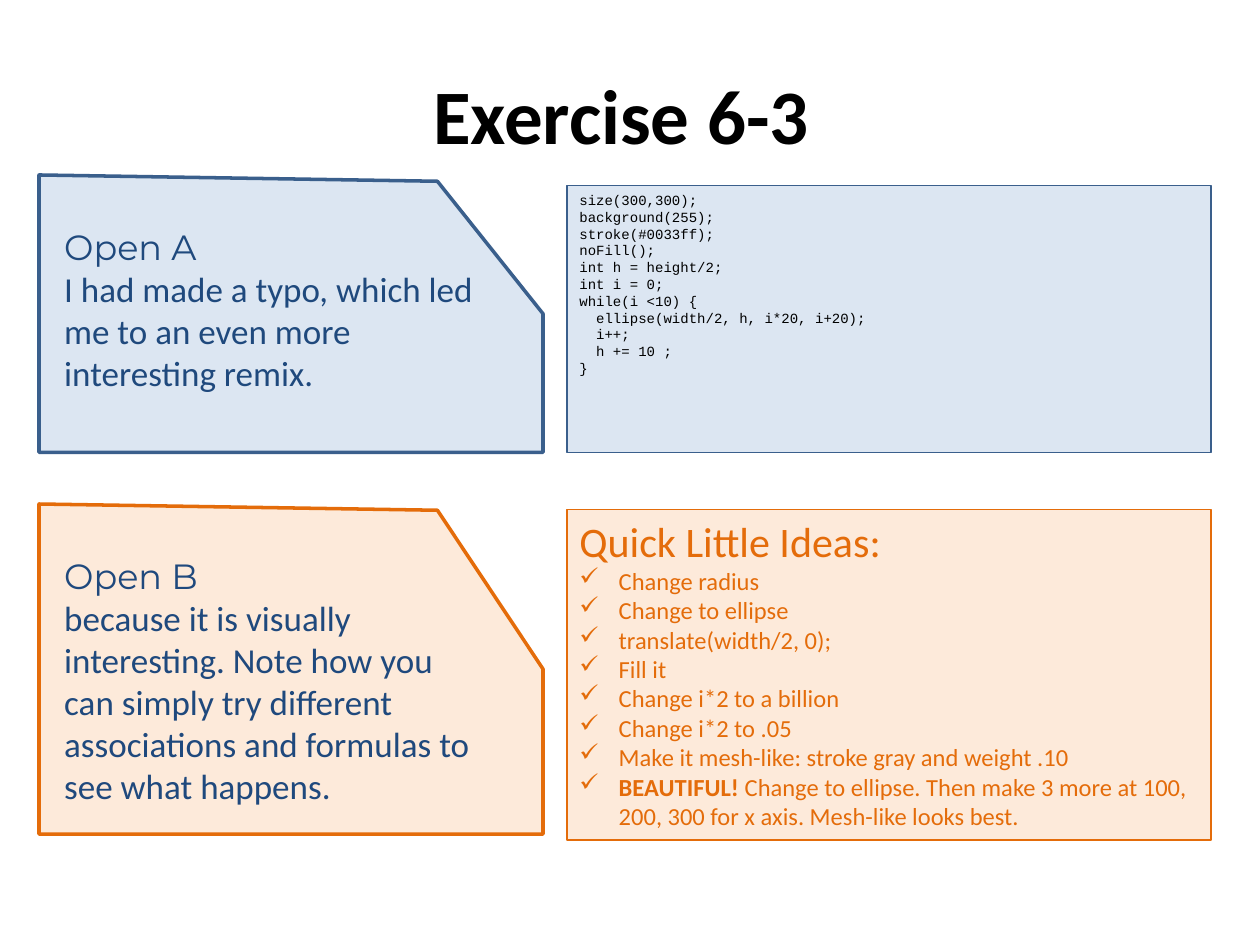
from lxml import etree
from pptx import Presentation
from pptx.dml.color import RGBColor
from pptx.enum.shapes import MSO_SHAPE
from pptx.enum.text import MSO_ANCHOR, PP_ALIGN
from pptx.oxml.ns import qn
from pptx.util import Pt

RECT = MSO_SHAPE.RECTANGLE
TOP, MIDDLE = MSO_ANCHOR.TOP, MSO_ANCHOR.MIDDLE
LEFT, CENTER = PP_ALIGN.LEFT, PP_ALIGN.CENTER

BLUE, PALE_BLUE, NAVY = "3A5F8C", "DCE6F2", "1F497D"
ORANGE, PALE_ORANGE = "E46C0A", "FDEADA"

CODE = """size(300,300);
background(255);
stroke(#0033ff);
noFill();
int h = height/2;
int i = 0;
while(i <10) {
  ellipse(width/2, h, i*20, i+20);
  i++;
  h += 10 ;
}"""

IDEAS = [
    "Change radius",
    "Change to ellipse",
    "translate(width/2, 0);",
    "Fill it",
    "Change i*2 to a billion",
    "Change i*2 to .05",
    "Make it mesh-like: stroke gray and weight .10",
]
BEST_IDEA = ("Change to ellipse. Then make 3 more at 100, 200, 300 for x axis. "
             "Mesh-like looks best.")

NOTE_A = "I had made a typo, which led me to an even more interesting remix."
NOTE_B = ("because it is visually interesting. Note how you can simply try "
          "different associations and formulas to see what happens.")


def rgb(color):
    return RGBColor.from_string(color)


def add_text(p, text, size=20, font="Calibri", color="000000", bold=False):
    r = p.add_run()
    r.text = text
    r.font.size, r.font.name, r.font.bold = Pt(size), font, bold
    r.font.color.rgb = rgb(color)


def add_check(p, indent=22.5):
    """Give the paragraph a hanging check mark as its bullet."""
    pPr = p._p.get_or_add_pPr()
    pPr.set("marL", str(Pt(indent)))
    pPr.set("indent", str(Pt(-indent)))
    etree.SubElement(pPr, qn("a:buChar")).set("char", "✓")


class Deck:
    """Holds the current slide and the shared style."""

    panel_left, panel_width = 324, 368
    card_left, card_cut, card_right = 22.3, 250, 310.3
    card_insets = (14.4, 28.8, 36, 3.6)

    def __init__(self):
        self.prs = Presentation()
        self.prs.slide_width, self.prs.slide_height = Pt(720), Pt(540)
        self.s = self.prs.slides.add_slide(self.prs.slide_layouts[5])

    def style(self, sp, fill, line, weight):
        sp.shadow.inherit = False
        sp.fill.solid()
        sp.fill.fore_color.rgb = rgb(fill)
        sp.line.color.rgb = rgb(line)
        sp.line.width = Pt(weight)
        tf = sp.text_frame
        tf.word_wrap = True
        tf.vertical_anchor = TOP
        tf.paragraphs[0].alignment = LEFT
        return tf

    def title(self, text):
        sp = self.s.shapes.title
        sp.left, sp.top, sp.width, sp.height = Pt(36), Pt(20), Pt(648), Pt(90)
        tf = sp.text_frame
        tf.vertical_anchor = MIDDLE
        p = tf.paragraphs[0]
        p.alignment = CENTER
        add_text(p, text, size=44, bold=True)

    def panel(self, top, height, fill, line):
        sp = self.s.shapes.add_shape(RECT, Pt(self.panel_left), Pt(top),
                                     Pt(self.panel_width), Pt(height))
        return self.style(sp, fill, line, 0.75)

    def paragraph(self, tf):
        p = tf.add_paragraph()
        p.alignment = LEFT
        return p

    def code(self, top, height, source):
        tf = self.panel(top, height, PALE_BLUE, BLUE)
        for i, line in enumerate(source.splitlines()):
            p = self.paragraph(tf) if i else tf.paragraphs[0]
            add_text(p, line, size=8, font="Courier New")

    def ideas(self, top, height, heading, items, best):
        tf = self.panel(top, height, PALE_ORANGE, ORANGE)
        add_text(tf.paragraphs[0], heading, size=24, color=ORANGE)
        for item in items + [best]:
            p = self.paragraph(tf)
            add_check(p)
            if item is best:
                add_text(p, "BEAUTIFUL! ", size=14, color=ORANGE, bold=True)
            add_text(p, item, size=14, color=ORANGE)

    def card(self, top, notch, bottom, fill, line, heading, note):
        """Draw a note card whose right corner is cut down to notch."""
        outline = [(self.card_cut, top + 3.6), (self.card_right, notch),
                   (self.card_right, bottom), (self.card_left, bottom)]
        fb = self.s.shapes.build_freeform(Pt(self.card_left), Pt(top))
        fb.add_line_segments([(Pt(x), Pt(y)) for x, y in outline], close=True)
        tf = self.style(fb.convert_to_shape(), fill, line, 2)
        (tf.margin_left, tf.margin_top,
         tf.margin_right, tf.margin_bottom) = map(Pt, self.card_insets)
        p = tf.paragraphs[0]
        add_text(p, heading, font="Montserrat", color=NAVY)
        p.add_line_break()
        add_text(p, note, color=NAVY)


def main():
    deck = Deck()
    deck.title("Exercise 6-3 ")
    deck.code(106, 152.6, CODE)
    deck.ideas(291, 189, "Quick Little Ideas:", IDEAS, BEST_IDEA)
    deck.card(100, 179.3, 258.5, PALE_BLUE, BLUE, "Open A ", NOTE_A)
    deck.card(288, 382.3, 476.6, PALE_ORANGE, ORANGE, "Open B ", NOTE_B)
    deck.prs.save("out.pptx")


if __name__ == "__main__":
    main()
